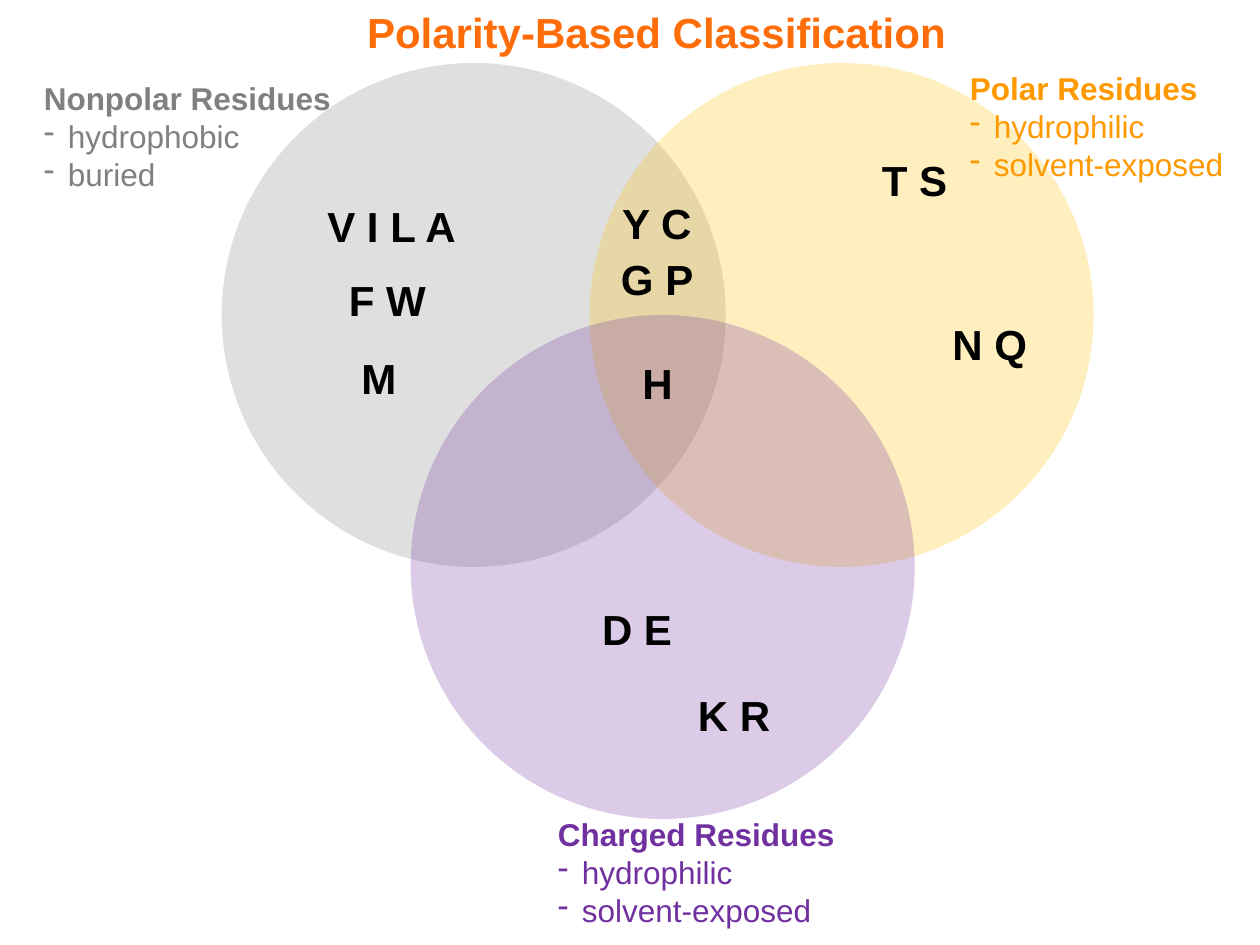
"""Draw a Venn diagram of amino acids classified by polarity."""
import pptx
import pptx.dml.color
import pptx.enum.shapes
import pptx.enum.text
import pptx.oxml
import pptx.oxml.ns
import pptx.util
from lxml import etree

Inches = pptx.util.Inches


def colour(hex_code):
    return pptx.dml.color.RGBColor.from_string(hex_code)


class VennSlide:
    font = "Arial"
    diameter = 4
    opacity = 25
    label_size = 18
    letter_size = 24
    indent = 0.19

    def __init__(self, slide):
        self.slide = slide

    def style(self, paragraph, size, hex_code, bold):
        for run in paragraph.runs:
            run.font.name = self.font
            run.font.size = pptx.util.Pt(size)
            run.font.bold = bold
            run.font.color.rgb = colour(hex_code)

    def circle(self, left, top, hex_code):
        disc = self.slide.shapes.add_shape(
            pptx.enum.shapes.MSO_SHAPE.OVAL, Inches(left), Inches(top),
            Inches(self.diameter), Inches(self.diameter))
        disc.shadow.inherit = False
        disc.fill.solid()
        disc.fill.fore_color.rgb = colour(hex_code)
        disc.line.fill.background()
        rgb = disc.fill._xPr.find(".//" + pptx.oxml.ns.qn("a:srgbClr"))
        etree.SubElement(rgb, pptx.oxml.ns.qn("a:alpha"), val=str(self.opacity * 1000))

    def text(self, shapes, left, top, width, height, words, wrap=False):
        frame = shapes.add_textbox(
            Inches(left), Inches(top), Inches(width), Inches(height)).text_frame
        frame.word_wrap = wrap
        frame.auto_size = pptx.enum.text.MSO_AUTO_SIZE.SHAPE_TO_FIT_TEXT
        frame.text = words
        return frame

    def title(self, left, top, width, words, hex_code):
        heading = self.text(
            self.slide.shapes, left, top, width, 0.5, words, wrap=True).paragraphs[0]
        heading.alignment = pptx.enum.text.PP_ALIGN.CENTER
        self.style(heading, self.letter_size, hex_code, True)

    def residue_class(self, left, top, width, hex_code, name, traits):
        frame = self.text(
            self.slide.shapes, left, top, width, 1.01, "\n".join([name, *traits]))
        heading, *bullets = frame.paragraphs
        self.style(heading, self.label_size, hex_code, True)
        for bullet in bullets:
            self.style(bullet, self.label_size, hex_code, False)
            properties = bullet._p.get_or_add_pPr()
            properties.set("marL", str(Inches(self.indent)))
            properties.set("indent", str(-Inches(self.indent)))
            etree.SubElement(properties, pptx.oxml.ns.qn("a:buChar"), char="-")

    def letters(self, rows):
        shapes = self.slide.shapes
        if len(rows) > 1:
            shapes = shapes.add_group_shape().shapes
        for left, top, width, residues in rows:
            frame = self.text(shapes, left, top, width, 0.5, residues)
            self.style(frame.paragraphs[0], self.letter_size, "000000", True)


def main():
    deck = pptx.Presentation()
    deck.slide_width, deck.slide_height = Inches(10), Inches(7.5)
    venn = VennSlide(deck.slides.add_slide(deck.slide_layouts[6]))

    venn.title(2.42, 0, 5.58, "Polarity-Based Classification", "FF6D09")

    for left, top, hex_code in [
        (1.76, 0.5, "808080"), (4.68, 0.5, "FFC000"), (3.26, 2.5, "7030A0"),
    ]:
        venn.circle(left, top, hex_code)

    exposed = ["hydrophilic", "solvent-exposed"]
    venn.residue_class(7.6, 0.5, 2.23, "FF9900", "Polar Residues", exposed)
    venn.residue_class(
        0.25, 0.58, 2.5, "808080", "Nonpolar Residues", ["hydrophobic", "buried"])
    venn.residue_class(4.33, 6.42, 2.42, "7030A0", "Charged Residues", exposed)

    for rows in [
        [(5, 2.79, 0.45, "H")],
        [(5.44, 5.42, 0.78, "K R"), (4.68, 4.74, 0.76, "D E")],
        [(4.84, 1.52, 0.76, "Y C"), (4.83, 1.96, 0.78, "G P")],
        [(2.77, 2.75, 0.48, "M"), (2.5, 1.54, 1.23, "V I L A"),
         (2.67, 2.13, 0.82, "F W")],
        [(7.46, 2.48, 0.8, "N Q"), (6.9, 1.18, 0.72, "T S")],
    ]:
        venn.letters(rows)

    deck.save("out.pptx")


if __name__ == "__main__":
    main()
